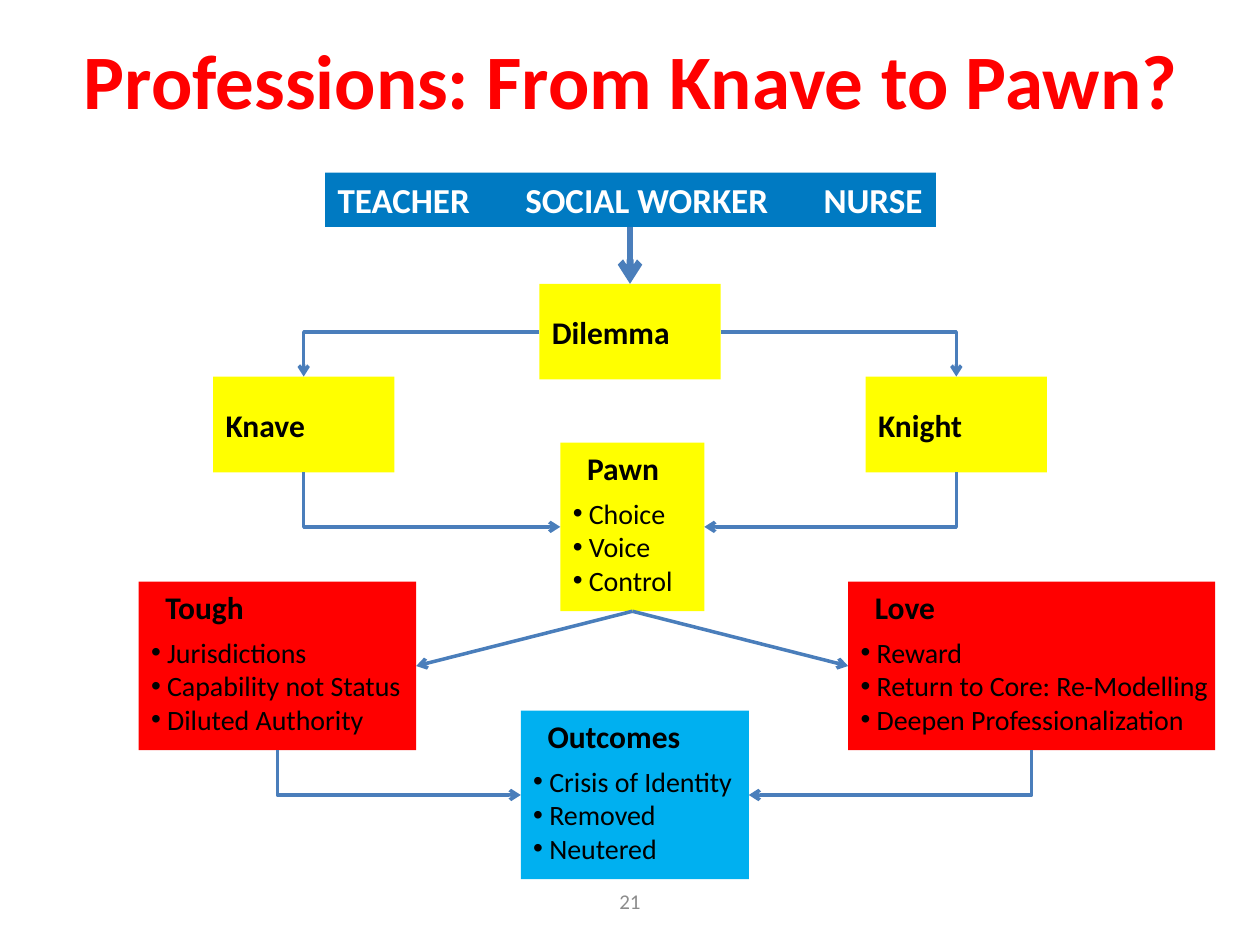
import pptx
import pptx.util
import pptx.dml.color
import pptx.enum.shapes
import pptx.enum.text
import pptx.oxml
import pptx.oxml.ns

Pt = pptx.util.Pt
qn = pptx.oxml.ns.qn
ALIGN = pptx.enum.text.PP_ALIGN
ANCHOR = pptx.enum.text.MSO_ANCHOR
KIND = pptx.enum.shapes.MSO_CONNECTOR
RECT = pptx.enum.shapes.MSO_SHAPE.RECTANGLE

hues = {"red": "FF0000", "blue": "007AC2", "yellow": "FFFF00", "sky": "00B0F0",
        "line": "4A7EBB", "grey": "8C8C8C", "black": "000000", "white": "FFFFFF"}
rgb = {name: pptx.dml.color.RGBColor.from_string(code) for name, code in hues.items()}

deck = pptx.Presentation()
deck.slide_width, deck.slide_height = Pt(720), Pt(540)
slide = deck.slides.add_slide(deck.slide_layouts[5])


def write(para, text, size, hue, bold=False, align=ALIGN.LEFT):
    para.alignment = align
    run = para.add_run()
    run.text = text
    run.font.color.rgb = rgb[hue]
    for key, value in {"name": "Calibri", "size": Pt(size), "bold": bold}.items():
        setattr(run.font, key, value)


def block(left, top, width, height, hue, anchor=ANCHOR.MIDDLE):
    box = slide.shapes.add_shape(RECT, Pt(left), Pt(top), Pt(width), Pt(height))
    box.shadow.inherit = False
    box.fill.solid()
    box.fill.fore_color.rgb = rgb[hue]
    box.line.fill.background()
    box.text_frame.vertical_anchor = anchor
    return box.text_frame


title = slide.shapes.title
form = {"left": Pt(36.7), "top": Pt(0), "width": Pt(648), "height": Pt(90)}
for key, value in form.items():
    setattr(title, key, value)
title.text_frame.vertical_anchor = ANCHOR.MIDDLE
write(title.text_frame.paragraphs[0], "Professions: From Knave to Pawn?", 44, "red", True, ALIGN.CENTER)

page = slide.shapes.add_textbox(Pt(246), Pt(500.4), Pt(228), Pt(28.8)).text_frame
page.word_wrap = True
page.vertical_anchor = ANCHOR.MIDDLE
write(page.paragraphs[0], "21", 12, "grey", align=ALIGN.CENTER)

head = block(185.8, 98.7, 349, 31, "blue")
head.word_wrap = True
head.margin_right = 0
para = head.paragraphs[0]
write(para, "TEACHER\tSOCIAL WORKER\tNURSE", 20, "white", True)
tabs = pptx.oxml.parse_xml("<a:tabLst %s/>" % pptx.oxml.ns.nsdecls("a"))
for stop in (107.3, 277.7):
    tab = tabs.makeelement(qn("a:tab"), {"pos": str(Pt(stop)), "algn": "l"})
    tabs.append(tab)
para._p.get_or_add_pPr().append(tabs)

for label, left, top in (("Dilemma", 308.2, 162.2), ("Knave", 121.8, 215.2), ("Knight", 494.7, 215.2)):
    frame = block(left, top, 103.6, 54.7, "yellow")
    frame.word_wrap = False
    write(frame.paragraphs[0], label, 18, "black", True)

lists = (
    ("Pawn", 320.2, 253, 82.3, "yellow", ("Choice", "Voice", "Control")),
    ("Tough", 79.2, 332.4, 158.6, "red",
     ("Jurisdictions", "Capability not Status", "Diluted Authority")),
    ("Love", 484.7, 332.4, 209.7, "red",
     ("Reward", "Return to Core: Re-Modelling", "Deepen Professionalization")),
    ("Outcomes", 297.6, 406.1, 130.3, "sky", ("Crisis of Identity", "Removed", "Neutered")),
)
for label, left, top, width, hue, items in lists:
    frame = block(left, top, width, 96.3, hue, ANCHOR.TOP)
    frame.word_wrap = False
    para = frame.paragraphs[0]
    write(para, label, 18, "black", True)
    para.space_after = Pt(5.4)
    para._p.get_or_add_pPr().set("marL", str(Pt(8.2)))
    for item in items:
        para = frame.add_paragraph()
        write(para, item, 16, "black")
        props = para._p.get_or_add_pPr()
        props.set("marL", str(Pt(9.2)))
        props.set("indent", str(Pt(-9.2)))
        props.append(props.makeelement(qn("a:buFont"), {"typeface": "Arial"}))
        props.append(props.makeelement(qn("a:buChar"), {"char": "•"}))

links = (
    ("straight", 360, 129.9, 360, 162.2, 4, "tail"),
    ("bent", 308.2, 189.8, 173.6, 215.2, 2, "tail"),
    ("bent", 411.8, 189.8, 546.5, 215.2, 2, "tail"),
    ("bent", 320.2, 301.1, 173.6, 269.9, 2, "head"),
    ("bent", 402.5, 301.1, 546.5, 269.9, 2, "head"),
    ("straight", 361.4, 349.3, 237.8, 380.6, 2, "tail"),
    ("straight", 361.4, 349.3, 484.7, 380.6, 2, "tail"),
    ("bent", 297.6, 454.3, 158.5, 428.7, 2, "head"),
    ("bent", 427.9, 454.3, 589.6, 428.7, 2, "head"),
)
for kind, *ends, width, tip in links:
    form = KIND.ELBOW if kind == "bent" else KIND.STRAIGHT
    link = slide.shapes.add_connector(form, *map(Pt, ends))
    link.line.color.rgb = rgb["line"]
    link.line.width = Pt(width)
    props = link.element.spPr
    if kind == "bent":
        props.find(qn("a:prstGeom")).set("prst", "bentConnector2")
    line = props.find(qn("a:ln"))
    line.append(line.makeelement(qn("a:%sEnd" % tip), {"type": "arrow"}))
    props.append(props.makeelement(qn("a:effectLst"), {}))

deck.save("out.pptx")
